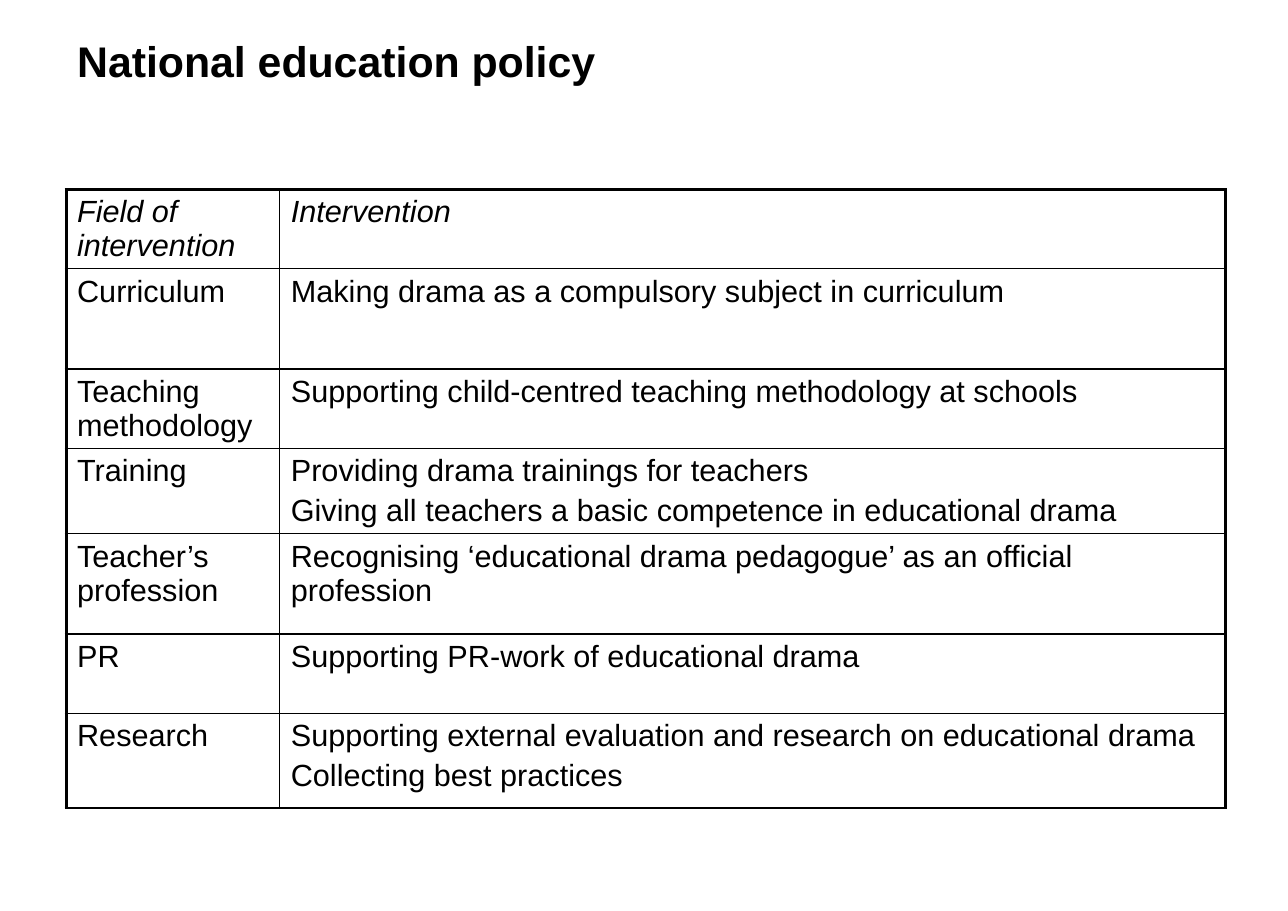
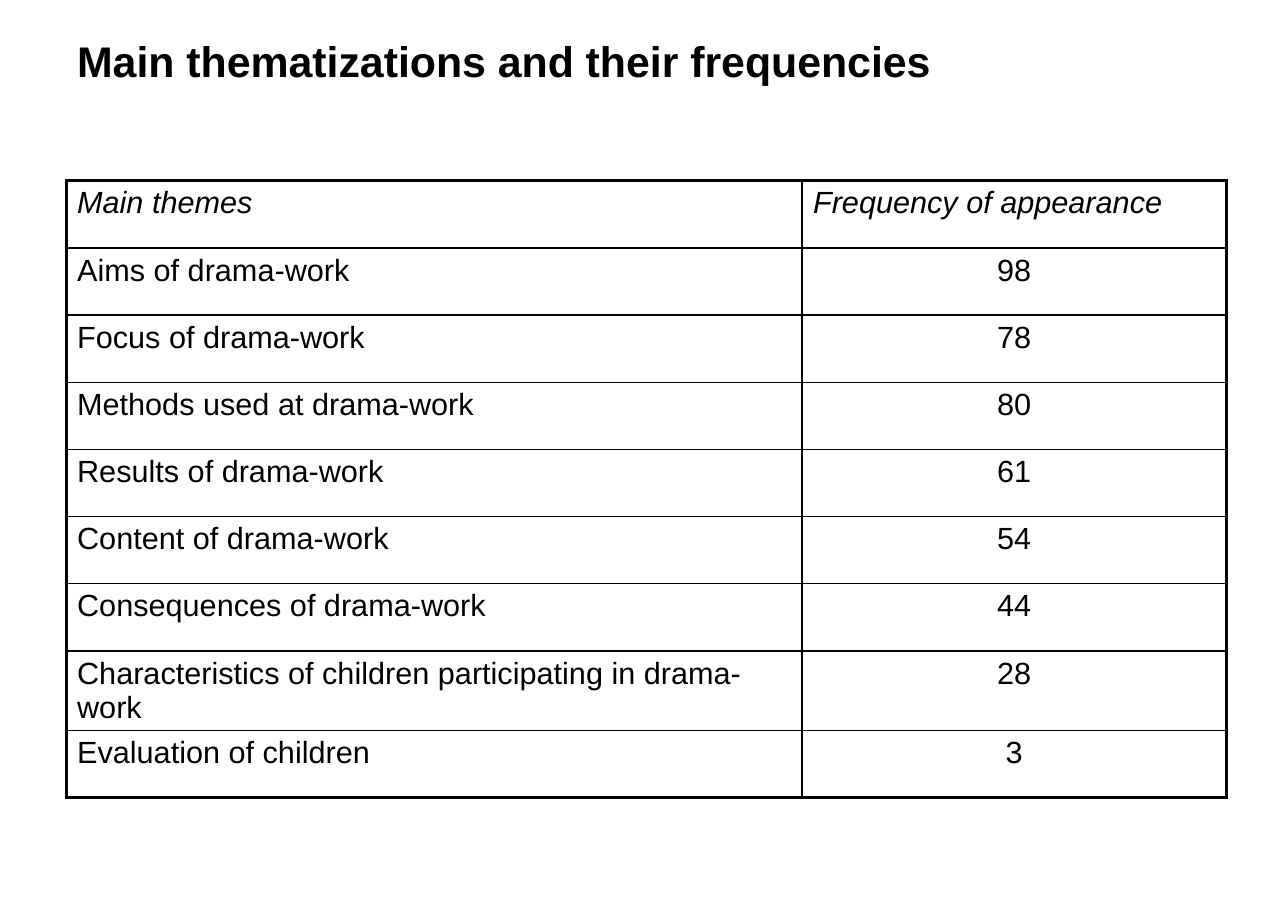
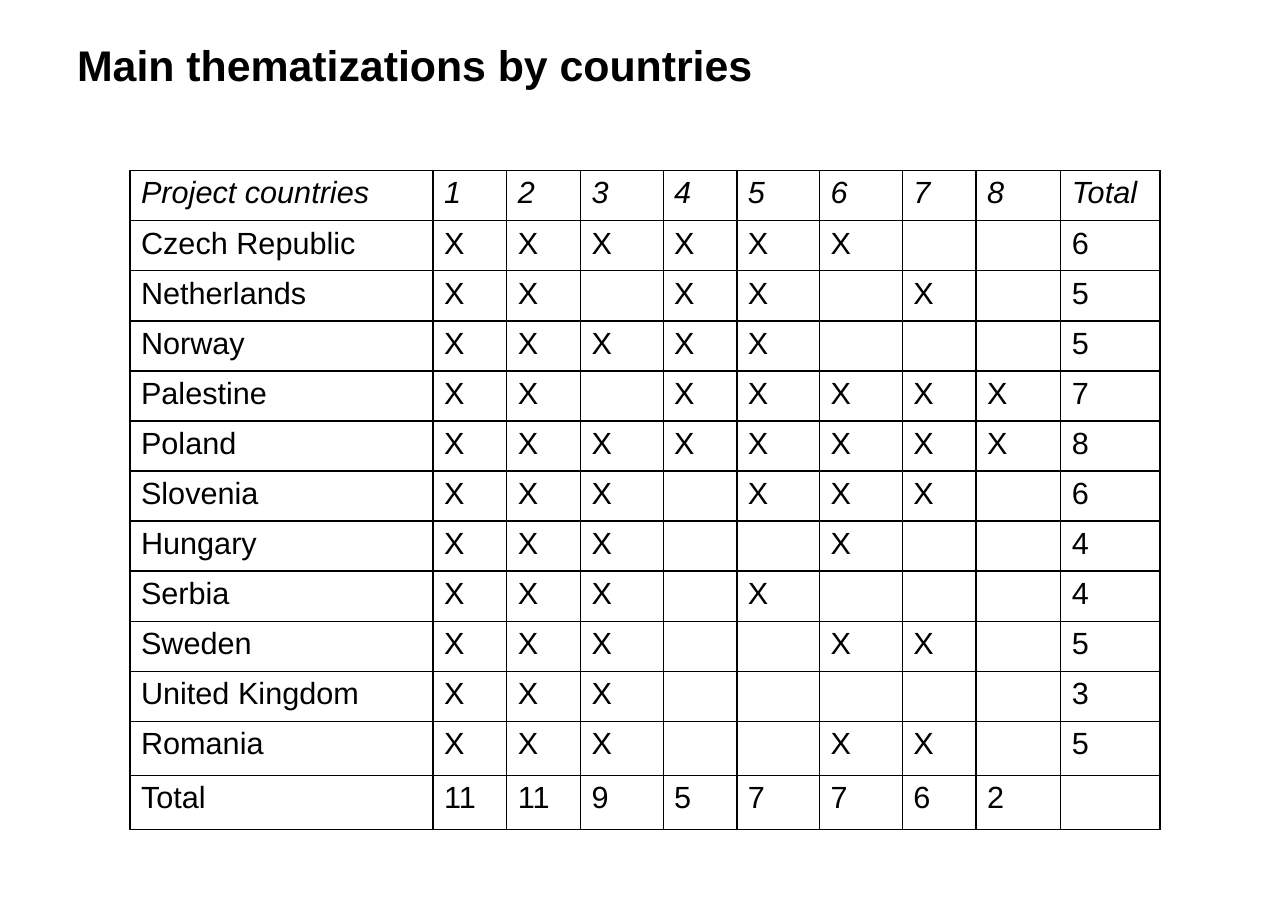
from lxml.etree import SubElement
from pptx import Presentation
from pptx.dml.color import RGBColor
from pptx.enum.text import MSO_ANCHOR, MSO_AUTO_SIZE, PP_ALIGN
from pptx.oxml.ns import qn
from pptx.util import Inches, Pt

FONT = "Arial"
BLACK = "000000"
THICK, THIN = 2.25, 1


def write(frame, text, size=20, bold=False, italic=False, color=BLACK, align=PP_ALIGN.LEFT):
    for i, line in enumerate(text.split("\n")):
        para = frame.add_paragraph() if i else frame.paragraphs[0]
        para.alignment = align
        para.space_before = Pt(4 if i else 0)
        run = para.add_run()
        run.text = line
        font = run.font
        font.name, font.size = FONT, Pt(size)
        font.bold, font.italic = bold, italic
        font.color.rgb = RGBColor.from_string(color)


def edge(cell, side, width, color=BLACK):
    line = SubElement(cell._tc.get_or_add_tcPr(), qn("a:ln" + side), w=str(Pt(width)))
    fill = SubElement(line, qn("a:solidFill"))
    SubElement(fill, qn("a:srgbClr"), val=color)


policy = [
    ["Field of intervention", "Intervention"],
    ["Curriculum", "Making drama as a compulsory subject in curriculum"],
    ["Teaching methodology", "Supporting child-centred teaching methodology at schools"],
    ["Training", "Providing drama trainings for teachers\n"
     "Giving all teachers a basic competence in educational drama"],
    ["Teacher’s profession", "Recognising ‘educational drama pedagogue’ as an official profession"],
    ["PR", "Supporting PR-work of educational drama"],
    ["Research", "Supporting external evaluation and research on educational drama\n"
     "Collecting best practices"],
]

themes = [
    ["Main themes", "Frequency of appearance"],
    ["Aims of drama-work", "98"],
    ["Focus of drama-work", "78"],
    ["Methods used at drama-work", "80"],
    ["Results of drama-work", "61"],
    ["Content of drama-work", "54"],
    ["Consequences of drama-work", "44"],
    ["Characteristics of children participating in drama-work", "28"],
    ["Evaluation of children", "3"],
]

marks = {
    "Czech Republic": "123456",
    "Netherlands": "12457",
    "Norway": "12345",
    "Palestine": "1245678",
    "Poland": "12345678",
    "Slovenia": "123567",
    "Hungary": "1236",
    "Serbia": "1235",
    "Sweden": "12367",
    "United Kingdom": "123",
    "Romania": "12367",
}
topics = "12345678"
lands = [["Project countries", *topics, "Total"]]
for name, found in marks.items():
    lands.append([name, *["X" if t in found else "" for t in topics], str(len(found))])
sums = [str(sum(t in found for found in marks.values())) for t in topics]
lands.append(["Total", *sums, ""])

pages = [
    dict(title="National education policy", head=0.47, left=0.6, top=1.72, rows=policy,
         cols=[1.94, 8.58], tall=[0.72, 0.91, 0.72, 0.77, 0.91, 0.72, 0.86],
         rim=THICK, align=PP_ALIGN.LEFT),
    dict(title="Main thematizations and their frequencies", head=0.47, left=0.6, top=1.64,
         rows=themes, cols=[6.68, 3.85], tall=[0.61] * 7 + [0.72, 0.61],
         rim=THICK, align=PP_ALIGN.CENTER),
    dict(title="Main thematizations by countries", head=0.5, left=1.18, top=1.55, rows=lands,
         cols=[2.75, 0.67, 0.67, 0.75, 0.67, 0.75, 0.75, 0.67, 0.77, 0.9],
         tall=[5 / 11] * 11 + [0.49] * 2, rim=THIN, align=PP_ALIGN.LEFT),
]

deck = Presentation()
deck.slide_width, deck.slide_height = Inches(11.69), Inches(8.27)

for page in pages:
    slide = deck.slides.add_slide(deck.slide_layouts[5])
    title = slide.shapes.title
    title.left, title.top = Inches(0.59), Inches(page["head"])
    title.width, title.height = Inches(10.52), Inches(0.16)
    frame = title.text_frame
    frame.auto_size = MSO_AUTO_SIZE.NONE
    frame.word_wrap = True
    frame.vertical_anchor = MSO_ANCHOR.MIDDLE
    frame.margin_left = frame.margin_right = Inches(0.11)
    write(frame, page["title"], size=28, bold=True)

    rows, cols, tall = page["rows"], page["cols"], page["tall"]
    table = slide.shapes.add_table(
        len(rows), len(cols), Inches(page["left"]), Inches(page["top"]),
        Inches(sum(cols)), Inches(sum(tall))).table
    table.first_row = table.horz_banding = False
    for col, width in zip(table.columns, cols):
        col.width = Inches(width)
    for row, height in zip(table.rows, tall):
        row.height = Inches(height)

    for r, texts in enumerate(rows):
        for c, text in enumerate(texts):
            cell = table.cell(r, c)
            cell.margin_left = cell.margin_right = Inches(0.1)
            cell.margin_top = cell.margin_bottom = Inches(0.05)
            outer = dict(L=c == 0, R=c == len(cols) - 1, T=r == 0, B=r == len(rows) - 1)
            for side, rim in outer.items():
                edge(cell, side, page["rim"] if rim else THIN)
            cell.fill.background()
            if text:
                align = page["align"] if r and c else PP_ALIGN.LEFT
                write(cell.text_frame, text, italic=r == 0, align=align)

deck.save("out.pptx")
